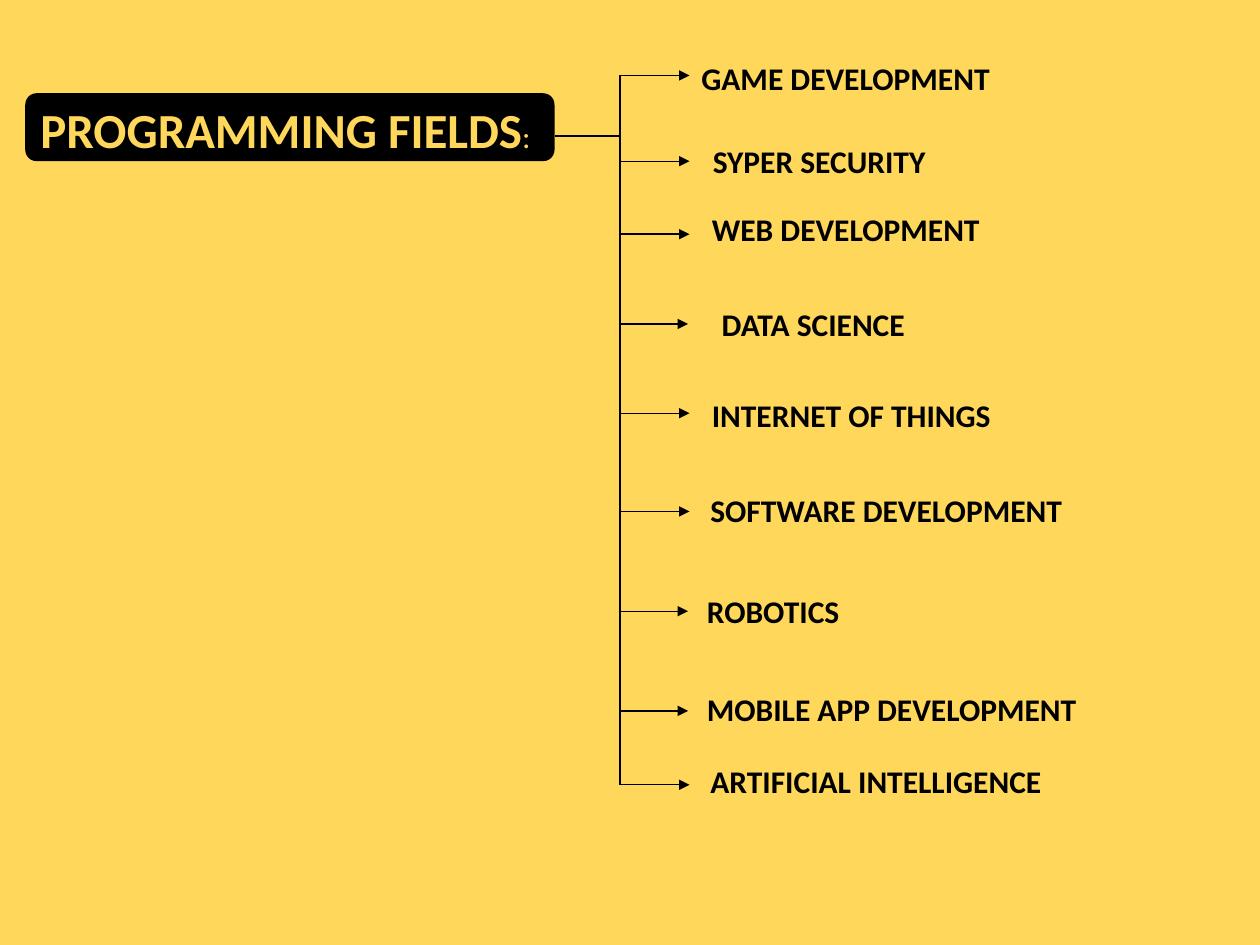
from dataclasses import dataclass

from lxml import etree
from pptx import Presentation
from pptx.dml.color import RGBColor
from pptx.enum import shapes, text
from pptx.oxml import ns
from pptx.util import Cm, Pt


@dataclass(frozen=True)
class Theme:
    back: str = "FFD85B"
    ink: str = "000000"
    font: str = "Calibri"
    head: int = 28
    body: int = 18
    line: float = 0.75


def write(para, words, font, size, color, bold=True):
    """Add one run of formatted text to a paragraph."""
    run = para.add_run()
    run.text = words
    run.font.name = font
    run.font.size = Pt(size)
    run.font.bold = bold
    run.font.color.rgb = RGBColor.from_string(color)


class Board:
    def __init__(self, slide, theme):
        self.slide = slide
        self.theme = theme
        self.paint(slide.background.fill, theme.back)

    def paint(self, fill, color):
        fill.solid()
        fill.fore_color.rgb = RGBColor.from_string(color)

    def frame(self, shape):
        """Set up a left-aligned text frame and return its paragraph."""
        frame = shape.text_frame
        frame.word_wrap = True
        frame.auto_size = text.MSO_AUTO_SIZE.NONE
        frame.vertical_anchor = text.MSO_ANCHOR.TOP
        para = frame.paragraphs[0]
        para.alignment = text.PP_ALIGN.LEFT
        return para

    def panel(self, left, top, width, height):
        box = self.slide.shapes.add_shape(
            shapes.MSO_SHAPE.ROUNDED_RECTANGLE,
            Cm(left), Cm(top), Cm(width), Cm(height))
        box.shadow.inherit = False
        self.paint(box.fill, self.theme.ink)
        box.line.fill.background()

    def title(self, words, mark, left, top, width, height):
        t = self.theme
        title = self.slide.shapes.title
        title.left, title.top = Cm(left), Cm(top)
        title.width, title.height = Cm(width), Cm(height)
        para = self.frame(title)
        write(para, words, t.font, t.head, t.back)
        write(para, mark, t.font, t.body, t.back, bold=False)
        # Bring the title in front of its panel
        title.element.getparent().append(title.element)

    def label(self, words, left, top, width):
        t = self.theme
        box = self.slide.shapes.add_textbox(
            Cm(left), Cm(top), Cm(width), Cm(1.03))
        write(self.frame(box), words, t.font, t.body, t.ink)

    def line(self, x1, y1, x2, y2, arrow=False):
        link = self.slide.shapes.add_connector(
            shapes.MSO_CONNECTOR.STRAIGHT, Cm(x1), Cm(y1), Cm(x2), Cm(y2))
        link.line.width = Pt(self.theme.line)
        self.paint(link.line.fill, self.theme.ink)
        if arrow:
            etree.SubElement(link.line._get_or_add_ln(),
                             ns.qn("a:tailEnd"), type="triangle")
        etree.SubElement(link.element.spPr, ns.qn("a:effectLst"))


# Field, label left, top and width, arrow start and height (cm)
FIELDS = [
    ("GAME DEVELOPMENT", 13.89, 1.07, 6.83, 12.5, 1.52),
    ("SYPER SECURITY", 14.12, 2.74, 5.41, 12.5, 3.25),
    ("WEB DEVELOPMENT", 14.1, 4.11, 7.39, 12.5, 4.72),
    ("DATA SCIENCE", 14.3, 6.02, 4.6, 12.47, 6.53),
    ("INTERNET OF THINGS", 14.1, 7.85, 6.2, 12.5, 8.33),
    ("SOFTWARE DEVELOPMENT", 14.07, 9.78, 9.4, 12.5, 10.31),
    ("ROBOTICS", 14, 11.81, 3.2, 12.47, 12.32),
    ("MOBILE APP DEVELOPMENT", 14, 13.79, 8.51, 12.47, 14.33),
    ("ARTIFICIAL INTELLIGENCE", 14.07, 15.24, 7.19, 12.5, 15.82),
]
TRUNK = 12.5
REACH = 1.4


def main():
    deck = Presentation()
    deck.slide_width, deck.slide_height = Cm(25.4), Cm(19.05)
    board = Board(deck.slides.add_slide(deck.slide_layouts[5]), Theme())

    # Heading
    board.panel(0.51, 1.88, 10.67, 1.37)
    board.title("PROGRAMMING FIELDS", ":", 0.56, 1.88, 11.61, 1.45)

    # Stem and trunk
    board.line(11.18, 2.74, TRUNK, 2.74)
    board.line(TRUNK, FIELDS[0][-1], TRUNK, FIELDS[-1][-1])

    # Branches
    for words, left, top, width, start, level in FIELDS:
        board.line(start, level, start + REACH, level, arrow=True)
        board.label(words, left, top, width)

    deck.save("out.pptx")


if __name__ == "__main__":
    main()
